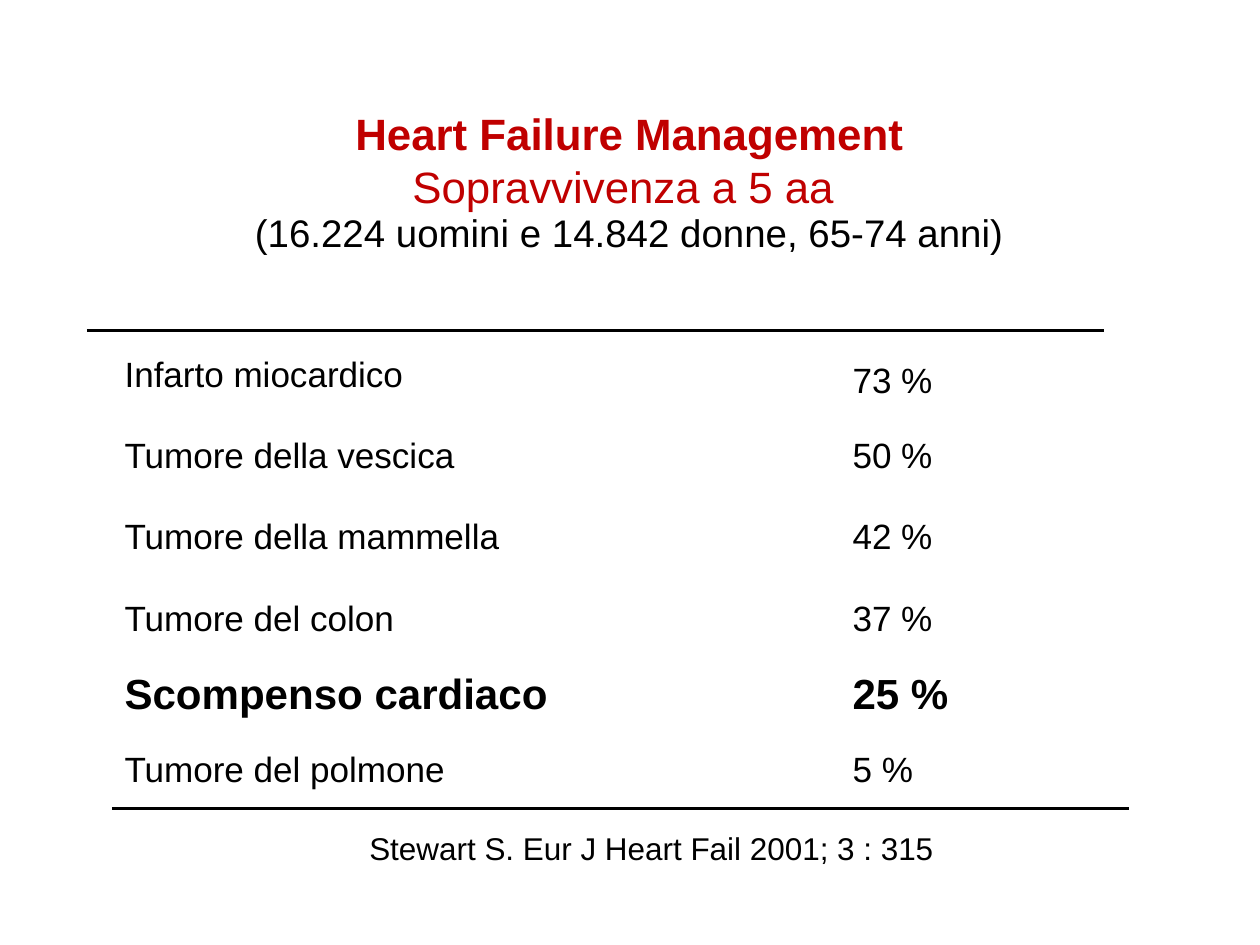
from pptx import Presentation
from pptx.dml.color import RGBColor
from pptx.enum.shapes import MSO_CONNECTOR
from pptx.enum.text import MSO_ANCHOR, MSO_AUTO_SIZE, PP_ALIGN
from pptx.oxml.ns import qn
from pptx.util import Emu, Inches, Pt
from lxml import etree

RED = "C00000"
BLACK = "000000"


def color(value):
    return RGBColor.from_string(value)


def write(frame, text, size=22.1, ink=BLACK, bold=False, align=PP_ALIGN.LEFT, new=False):
    para = frame.add_paragraph() if new else frame.paragraphs[0]
    para.alignment = align
    para.line_spacing = 0.93
    span = para.add_run()
    span.text = text
    span.font.name = "Arial"
    span.font.size = Pt(size)
    span.font.bold = bold
    span.font.color.rgb = color(ink)


# Page of 11.02 by 8.27 inches, in exact units
deck = Presentation()
deck.slide_width = Emu(10080625)
deck.slide_height = Emu(7559675)
page = deck.slides.add_slide(deck.slide_layouts[5])

# Title
title = page.shapes.title
title.left, title.top = Inches(0.57), Inches(0.41)
title.width, title.height = Inches(9.87), Inches(1.56)
title.text_frame.auto_size = MSO_AUTO_SIZE.NONE
title.text_frame.vertical_anchor = MSO_ANCHOR.MIDDLE
write(title.text_frame, "Heart Failure Management", size=27.6, ink=RED, bold=True,
      align=PP_ALIGN.CENTER)

# Subtitle and citation
text_boxes = [
    (0.2, 1.38, 10.61, 1.37, [("Sopravvivenza a 5 aa ", 27.6, RED),
                              ("(16.224 uomini e 14.842 donne, 65-74 anni)", 24.2, BLACK)]),
    (0.38, 7.22, 10.64, 0.42, [("Stewart S. Eur J Heart Fail 2001; 3 : 315", 19.8, BLACK)]),
]
for left, top, width, height, lines in text_boxes:
    box = page.shapes.add_textbox(Inches(left), Inches(top), Inches(width), Inches(height))
    frame = box.text_frame
    frame.word_wrap = True
    frame.margin_left = frame.margin_right = Inches(0.11)
    frame.margin_top = frame.margin_bottom = Inches(0.06)
    for index, (text, size, ink) in enumerate(lines):
        write(frame, text, size=size, ink=ink, align=PP_ALIGN.CENTER, new=index > 0)

# Survival table: disease, five-year survival, row height
survival = [
    ("Infarto miocardico", "73 %", 0.71),
    ("Tumore della vescica", "50 %", 0.66),
    ("Tumore della mammella", "42 %", 0.77),
    ("Tumore del colon", "37 %", 0.66),
    ("Scompenso cardiaco", "25 %", 0.66),
    ("Tumore del polmone", "5 %", 0.66),
]
table = page.shapes.add_table(len(survival), 2, Inches(0.98), Inches(2.96),
                              Inches(8.9), Inches(4.12)).table
table.first_row = table.horz_banding = False
table.columns[0].width = Inches(6.37)
table.columns[1].width = Inches(2.53)
for row, (disease, rate, height) in enumerate(survival):
    table.rows[row].height = Inches(height)
    highlight = disease == "Scompenso cardiaco"
    for column, text in enumerate((disease, rate)):
        cell = table.cell(row, column)
        cell.fill.background()
        cell.vertical_anchor = MSO_ANCHOR.MIDDLE
        cell.margin_left = cell.margin_right = Inches(0.11)
        cell.margin_top = cell.margin_bottom = Inches(0.06)
        write(cell.text_frame, text, size=26.5 if highlight else 22.1, bold=highlight)

# The first row's label sits slightly higher than its value
table.cell(0, 0).margin_bottom = Inches(0.11)
table.cell(0, 1).margin_top = Inches(0.13)

# Rules above and below the table
for left, top in [(0.76, 2.89), (0.98, 7.07)]:
    rule = page.shapes.add_connector(MSO_CONNECTOR.STRAIGHT, Inches(left), Inches(top),
                                     Inches(left + 8.9), Inches(top))
    rule.line.color.rgb = color(BLACK)
    rule.line.width = Pt(2)
    etree.SubElement(rule._element.spPr, qn("a:effectLst"))

deck.save("out.pptx")
